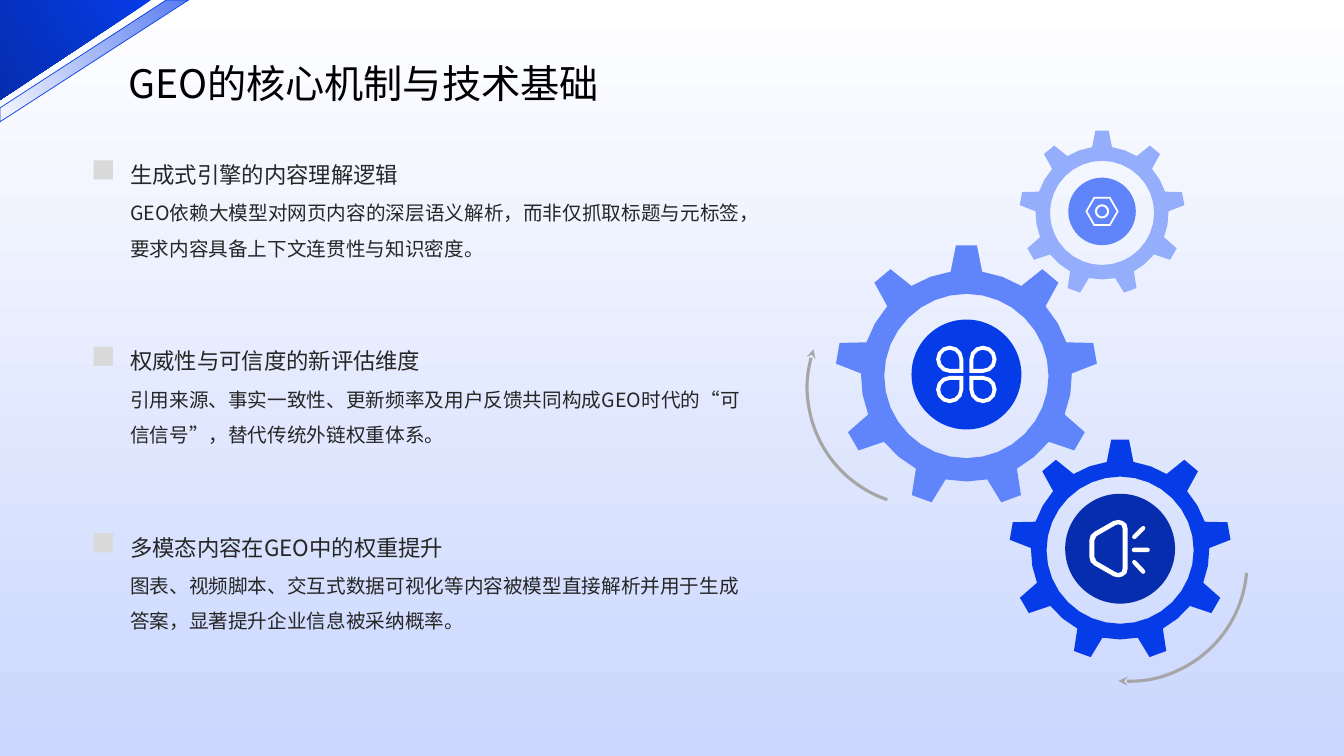
import math
from dataclasses import dataclass

import lxml.etree
import pptx
import pptx.dml.color
import pptx.enum.shapes
import pptx.enum.text
import pptx.oxml.ns
import pptx.util

RGB = pptx.dml.color.RGBColor
SHAPE = pptx.enum.shapes.MSO_SHAPE
ANCHOR = pptx.enum.text.MSO_ANCHOR
qn = pptx.oxml.ns.qn

WHITE = RGB(0xFF, 0xFF, 0xFF)
BLACK = RGB(0x00, 0x00, 0x00)
INK = RGB(0x26, 0x26, 0x26)
MARKER_GREY = RGB(0xD9, 0xD9, 0xD9)
ARROW_GREY = RGB(0xA6, 0xA6, 0xA6)
PALE = RGB(0xCA, 0xD6, 0xFE)
LIGHT = RGB(0x95, 0xAE, 0xFC)
MID = RGB(0x60, 0x85, 0xFB)
BLUE = RGB(0x06, 0x3C, 0xE8)
NAVY = RGB(0x05, 0x2D, 0xAE)
FONT = "Noto Sans CJK SC"

# The slide is a grid of 160 columns and 90 rows of square cells.
COLUMNS, ROWS = 160, 90
CELL = 76200
TEXT_LEFT, TEXT_WIDTH = 15.5, 72.6
TOPIC_TOP, TOPIC_PITCH = 18.25, 22.2
TEETH = 9
HUB_LIFT = 0.18

Point = tuple[float, float]
Contour = list[Point]


@dataclass
class Topic:
    heading: str
    body: str


@dataclass
class Gear:
    x: float
    y: float
    tip: float
    hole: float
    hub: float
    color: RGB
    hub_color: RGB
    icon: list[Contour]


@dataclass
class Turn:
    left: float
    top: float
    rotation: float


def cells(*values: float) -> list[pptx.util.Emu]:
    return [pptx.util.Emu(round(v * CELL)) for v in values]


def polar(radius: float, degrees: float) -> Point:
    """Point at an angle measured clockwise from straight up."""
    a = math.radians(degrees)
    return radius * math.sin(a), -radius * math.cos(a)


def ring(radius: float, sides: int, start: float = 0) -> Contour:
    return [polar(radius, start + 360 * i / sides) for i in range(sides)]


def cog(tip: float) -> Contour:
    base, pitch = tip * 0.805, 360 / TEETH
    points = []
    for tooth in range(TEETH):
        a = tooth * pitch
        points += [polar(base, a - 8.6), polar(tip, a - 4.6), polar(tip, a + 4.6),
                   polar(base, a + 8.6), polar(base, a + pitch / 2)]
    return points


def petal(radius: float, sx: int, sy: int) -> Contour:
    """Circle with a square corner that faces the icon's centre."""
    points = [(-radius, -radius)] + [polar(radius, 30 * i) for i in range(10)]
    return [(sx * (1.98 + x), sy * (1.8 + y)) for x, y in points]


def bar(x1: float, y1: float, x2: float, y2: float, radius: float = 0.26) -> Contour:
    """Line with round ends."""
    heading = math.degrees(math.atan2(y2 - y1, x2 - x1)) + 90
    points = []
    for x, y, turn in ((x2, y2, -90), (x1, y1, 90)):
        for i in range(4):
            dx, dy = polar(radius, heading + turn + 60 * i)
            points.append((x + dx, y + dy))
    return points


def mirrored(upper: Contour) -> Contour:
    return upper + [(x, -y) for x, y in reversed(upper)]


CLOVER = [petal(r, sx, sy) for sx in (-1, 1) for sy in (-1, 1) for r in (1.62, 1.14)]
NUT = [ring(1.98, 6, 30), ring(1.74, 6, 30), ring(0.84, 16), ring(0.6, 16)]
HORN = [
    mirrored([(-3.66, -1), (-3.5, -1.6), (-3.06, -2), (-0.78, -3.3),
              (-0.2, -3.42), (0.3, -3.3), (0.75, -2.95), (0.9, -2.34)]),
    mirrored([(-3.06, -1), (-2.8, -1.5), (-0.54, -2.8), (-0.2, -2.9),
              (0.2, -2.75), (0.3, -2.34)]),
    bar(1.68, -1.38, 2.76, -2.45),
    bar(1.62, 0.15, 3.3, 0.15),
    bar(1.68, 1.6, 2.76, 2.75),
]

TOPICS = [
    Topic("生成式引擎的内容理解逻辑",
          "GEO依赖大模型对网页内容的深层语义解析，而非仅抓取标题与元标签，要求内容具备上下文连贯性与知识密度。"),
    Topic("权威性与可信度的新评估维度",
          "引用来源、事实一致性、更新频率及用户反馈共同构成GEO时代的“可信信号”，替代传统外链权重体系。"),
    Topic("多模态内容在GEO中的权重提升",
          "图表、视频脚本、交互式数据可视化等内容被模型直接解析并用于生成答案，显著提升企业信息被采纳概率。"),
]
GEARS = [
    Gear(115.05, 44.76, 15.6, 9.78, 6.54, MID, BLUE, CLOVER),
    Gear(133.35, 65.5, 13.2, 8.76, 6.54, BLUE, NAVY, HORN),
    Gear(131.2, 25.35, 9.84, 6.2, 4.02, LIGHT, MID, NUT),
]
TURNS = [Turn(96.1, 32.05, 198.9), Turn(120.25, 52.9, 94.9)]


def set_text(sp, text: str, size: float, color: RGB, spacing: float, anchor) -> None:
    tf = sp.text_frame
    tf.word_wrap = True
    tf.auto_size = pptx.enum.text.MSO_AUTO_SIZE.NONE
    tf.vertical_anchor = anchor
    tf.margin_left = tf.margin_right = tf.margin_top = tf.margin_bottom = 0
    p = tf.paragraphs[0]
    p.text = text
    p.alignment = pptx.enum.text.PP_ALIGN.LEFT
    p.line_spacing = spacing
    p.font.name, p.font.size = FONT, pptx.util.Pt(size)
    p.font.color.rgb = color
    lxml.etree.SubElement(p.font._element, qn("a:ea"), typeface=FONT)


def set_gradient(fill, first: RGB, last: RGB, angle: float) -> None:
    fill.gradient()
    fill.gradient_angle = angle
    for stop, color in zip(fill.gradient_stops, (first, last)):
        stop.color.rgb = color


def add_preset(s, kind, left: float, top: float, size: float, color: RGB | None = None):
    sp = s.shapes.add_shape(kind, *cells(left, top, size, size))
    sp.shadow.inherit = False
    if color is not None:
        sp.fill.solid()
        sp.fill.fore_color.rgb = color
        sp.line.fill.background()
    return sp


def add_outline(s, contours: list[Contour], x: float = 0, y: float = 0,
                color: RGB | None = None):
    """Draw closed contours around (x, y); inner contours become holes."""
    placed = [[cells(x + dx, y + dy) for dx, dy in c] for c in contours]
    builder = s.shapes.build_freeform(*placed[0][0])
    for i, points in enumerate(placed):
        if i:
            builder.move_to(*points[0])
        builder.add_line_segments(points[1:], close=True)
    sp = builder.convert_to_shape()
    sp.shadow.inherit = False
    sp.line.fill.background()
    if color is not None:
        sp.fill.solid()
        sp.fill.fore_color.rgb = color
    return sp


def add_topic(s, topic: Topic, top: float) -> None:
    add_preset(s, SHAPE.RECTANGLE, 11.16, top + 0.83, 2.28, MARKER_GREY)
    heading = s.shapes.add_textbox(*cells(TEXT_LEFT, top, TEXT_WIDTH, 4.1))
    set_text(heading, topic.heading, 16, INK, 1.2, ANCHOR.BOTTOM)
    body = s.shapes.add_textbox(*cells(TEXT_LEFT, top + 4.3, TEXT_WIDTH, 15.6))
    set_text(body, topic.body, 14, INK, 1.5, ANCHOR.TOP)


def add_gear(s, g: Gear) -> None:
    add_outline(s, [ring(g.hole, 32), cog(g.tip)], g.x, g.y, g.color)
    hub_y = g.y - HUB_LIFT
    add_preset(s, SHAPE.OVAL, g.x - g.hub, hub_y - g.hub, 2 * g.hub, g.hub_color)
    add_outline(s, g.icon, g.x, hub_y, WHITE)


def add_turn(s, turn: Turn) -> None:
    sp = add_preset(s, SHAPE.ARC, turn.left, turn.top, 28.2)
    sp.rotation = turn.rotation
    sp.fill.background()
    sp.line.color.rgb = ARROW_GREY
    sp.line.width = pptx.util.Pt(2.25)
    lxml.etree.SubElement(sp.line._get_or_add_ln(), qn("a:tailEnd"), type="stealth")


def add_corner(s) -> None:
    triangle = add_outline(s, [[(0, 0), (18, 0), (0, 11.9)]])
    set_gradient(triangle.fill, BLUE, NAVY, 213)
    stripe = add_outline(s, [[(19.8, 0), (22.45, 0), (0, 14.5), (0, 12.85)]])
    set_gradient(stripe.fill, BLUE, BLUE, 213)
    colors = list(stripe._element.spPr.iter(qn("a:srgbClr")))
    for color, opacity in zip(colors, (68000, 0)):
        lxml.etree.SubElement(color, qn("a:alpha"), val=str(opacity))
    stripe.line.color.rgb = BLUE
    stripe.line.width = pptx.util.Pt(0.5)


def main() -> None:
    prs = pptx.Presentation()
    prs.slide_width, prs.slide_height = cells(COLUMNS, ROWS)
    s = prs.slides.add_slide(prs.slide_layouts[5])
    set_gradient(s.background.fill, WHITE, PALE, 270)
    title = s.shapes.title
    title.left, title.top, title.width, title.height = cells(15.25, 5.15, 101, 7.8)
    set_text(title, "GEO的核心机制与技术基础", 28, BLACK, 1.3, ANCHOR.MIDDLE)
    for i, topic in enumerate(TOPICS):
        add_topic(s, topic, TOPIC_TOP + i * TOPIC_PITCH)
    for gear in GEARS:
        add_gear(s, gear)
    for turn in TURNS:
        add_turn(s, turn)
    add_corner(s)
    prs.save("out.pptx")


if __name__ == "__main__":
    main()
